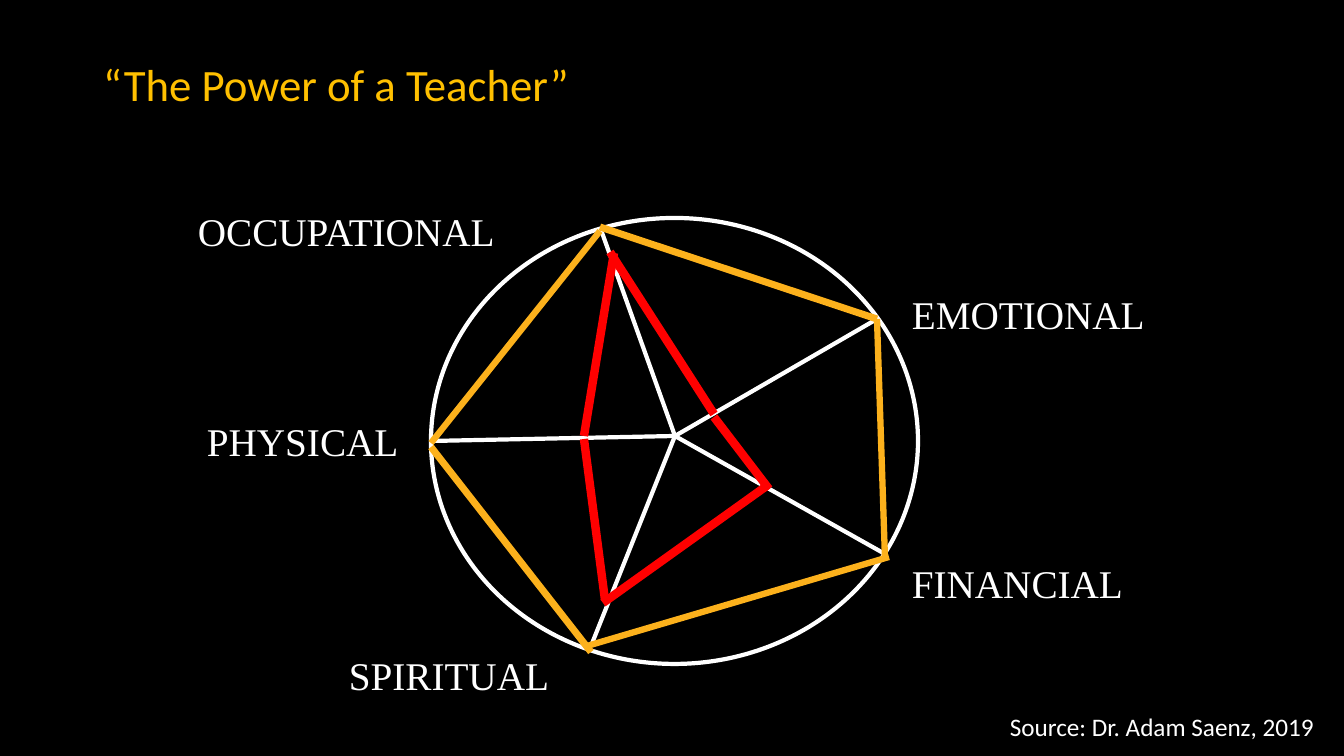
from pptx import Presentation
from pptx.dml.color import RGBColor
from pptx.enum.shapes import MSO_CONNECTOR as Link, MSO_SHAPE as Shape
from pptx.enum.text import MSO_ANCHOR as Anchor, MSO_AUTO_SIZE as Fit, PP_ALIGN as Align
from pptx.util import Pt
from lxml import etree

BLACK = RGBColor(0x00, 0x00, 0x00)
WHITE = RGBColor(0xFF, 0xFF, 0xFF)
AMBER = RGBColor(0xFF, 0xC0, 0x00)
GOLD = RGBColor(0xFC, 0xB1, 0x1C)
RED = RGBColor(0xFF, 0x00, 0x00)
SANS, SERIF = "Calibri", "Times New Roman"
WIDE, HIGH = 1344, 756
SCALE = 12192000 / WIDE
A_NS = "http://schemas.openxmlformats.org/drawingml/2006/main"

TITLE = "“The Power of a Teacher”"
TITLE_BOX = (93, 40, 1159, 94)
WHEEL = (431, 218, 487, 446)
HUB = (675, 436)
RIM = [(431, 441), (885, 554), (591, 646), (877, 319), (600, 227)]
# Each side: start, end, width in points
GOAL = [
    ((600, 227), (877, 319), 5),
    ((877, 319), (885, 558), 4.5),
    ((587, 646), (889, 557), 4.5),
    ((431, 443), (600, 231), 4.5),
    ((431, 447), (591, 652), 5),
]
SCORE = [
    ((610, 252), (714, 414), 6),
    ((714, 417), (769, 489), 6),
    ((603, 603), (768, 485), 6),
    ((584, 439), (605, 600), 6),
    ((614, 253), (584, 436), 6),
]
# Each label: text, box, font, size in points
LABELS = [
    ("OCCUPATIONAL", (188, 202, 361, 58), SERIF, 28),
    ("PHYSICAL", (197, 412, 227, 58), SERIF, 28),
    ("SPIRITUAL", (339, 646, 244, 58), SERIF, 28),
    ("FINANCIAL", (902, 554, 285, 58), SERIF, 28),
    ("EMOTIONAL", (902, 285, 285, 58), SERIF, 28),
    ("Source: Dr. Adam Saenz, 2019", (1000, 706, 344, 40), SANS, 18),
]


def emu(box):
    return [round(n * SCALE) for n in box]


def write(para, text, font, size, color):
    run = para.add_run()
    run.text = text
    run.font.name = font
    run.font.size = Pt(size)
    run.font.color.rgb = color


def draw(slide, start, end, width, color):
    line = slide.shapes.add_connector(Link.STRAIGHT, *emu(start + end))
    line.line.color.rgb = color
    line.line.width = Pt(width)
    etree.SubElement(line._element.spPr, f"{{{A_NS}}}effectLst")


def head(slide):
    title = slide.shapes.title
    title.left, title.top, title.width, title.height = emu(TITLE_BOX)
    frame = title.text_frame
    frame.auto_size = Fit.NONE
    frame.vertical_anchor = Anchor.MIDDLE
    para = frame.paragraphs[0]
    para.alignment = Align.LEFT
    para.line_spacing = 0.9
    write(para, TITLE, SANS, 32, AMBER)


def wheel(slide):
    ring = slide.shapes.add_shape(Shape.OVAL, *emu(WHEEL))
    ring.shadow.inherit = False
    ring.fill.background()
    ring.line.color.rgb = WHITE
    ring.line.width = Pt(3)
    for point in RIM:
        draw(slide, HUB, point, 3, WHITE)


def label(slide, text, box, font, size):
    frame = slide.shapes.add_textbox(*emu(box)).text_frame
    frame.word_wrap = True
    frame.auto_size = Fit.SHAPE_TO_FIT_TEXT
    write(frame.paragraphs[0], text, font, size, WHITE)


def main():
    deck = Presentation()
    deck.slide_width, deck.slide_height = emu((WIDE, HIGH))
    slide = deck.slides.add_slide(deck.slide_layouts[5])
    slide.background.fill.solid()
    slide.background.fill.fore_color.rgb = BLACK
    head(slide)
    wheel(slide)
    for item in LABELS:
        label(slide, *item)
    for sides, color in ((GOAL, GOLD), (SCORE, RED)):
        for side in sides:
            draw(slide, *side, color)
    deck.save("out.pptx")


if __name__ == "__main__":
    main()
